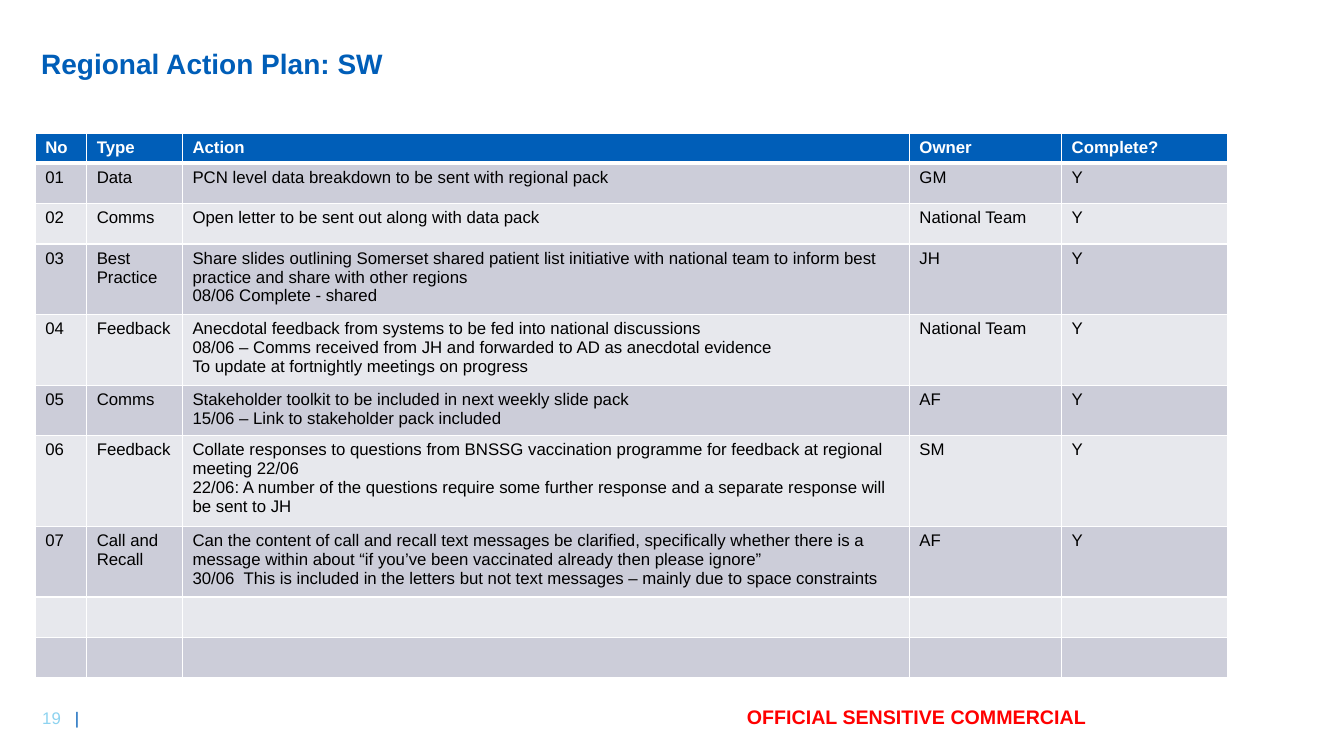
from dataclasses import dataclass

from lxml import etree
from pptx import Presentation
from pptx.dml.color import RGBColor
from pptx.enum.shapes import MSO_SHAPE
from pptx.enum.text import MSO_ANCHOR, PP_ALIGN
from pptx.oxml.ns import qn
from pptx.util import Inches, Pt

RECTANGLE = MSO_SHAPE.RECTANGLE
MIDDLE = MSO_ANCHOR.MIDDLE
LEFT = PP_ALIGN.LEFT


@dataclass(frozen=True)
class Theme:
    font: str = "Arial"
    blue: str = "005EB8"
    pale_blue: str = "8DD3F0"
    red: str = "FF0000"
    white: str = "FFFFFF"
    black: str = "000000"
    dark_band: str = "CCCDD9"
    light_band: str = "E7E8ED"
    title_size: int = 20
    marking_size: int = 14
    body_size: int = 12


theme = Theme()


def style_font(font, size, color, bold=False):
    font.name = theme.font
    font.size = Pt(size)
    font.bold = bold
    font.color.rgb = RGBColor.from_string(color)


def set_cell_borders(cell, bottom_width):
    """Draw white cell edges, 1 pt except for the bottom one."""
    properties = cell._tc.get_or_add_tcPr()
    edges = {"a:lnL": 1, "a:lnR": 1, "a:lnT": 1, "a:lnB": bottom_width}
    for position, (edge, width) in enumerate(edges.items()):
        line = etree.Element(qn(edge), w=str(Pt(width)))
        fill = etree.SubElement(line, qn("a:solidFill"))
        etree.SubElement(fill, qn("a:srgbClr"), val=theme.white)
        properties.insert(position, line)


prs = Presentation()
prs.slide_width = Inches(13.33)
prs.slide_height = Inches(7.5)
slide = prs.slides.add_slide(prs.slide_layouts[6])

# Footer
page_number = slide.shapes.add_textbox(Inches(0.32), Inches(6.97), Inches(0.71), Inches(0.3))
page_line = page_number.text_frame.paragraphs[0]
for text, color in [("19   ", theme.pale_blue), ("|", theme.blue)]:
    run = page_line.add_run()
    run.text = text
    style_font(run.font, theme.body_size, color)

marking = slide.shapes.add_shape(
    RECTANGLE, Inches(7.31), Inches(6.93), Inches(4.88), Inches(0.35))
marking.shadow.inherit = False
marking.fill.solid()
marking.fill.fore_color.rgb = RGBColor.from_string(theme.white)
marking.line.color.rgb = RGBColor.from_string(theme.white)
marking.line.width = Pt(1)
marking.text_frame.vertical_anchor = MIDDLE
marking_line = marking.text_frame.paragraphs[0]
marking_line.text = "OFFICIAL SENSITIVE COMMERCIAL"
marking_line.alignment = LEFT
style_font(marking_line.font, theme.marking_size, theme.red, bold=True)

# Title
title = slide.shapes.add_textbox(Inches(0.31), Inches(0.31), Inches(11.15), Inches(0.67))
title.text_frame.word_wrap = True
title.text_frame.vertical_anchor = MIDDLE
title_line = title.text_frame.paragraphs[0]
title_line.text = "Regional Action Plan: SW"
title_line.line_spacing = 0.9
style_font(title_line.font, theme.title_size, theme.blue, bold=True)

# Action table
blank_row = ("",) * 5
actions = [
    ("No", "Type", "Action", "Owner", "Complete?"),
    ("01", "Data", "PCN level data breakdown to be sent with regional pack", "GM", "Y"),
    ("02", "Comms", "Open letter to be sent out along with data pack", "National Team", "Y"),
    ("03", "Best Practice",
     "Share slides outlining Somerset shared patient list initiative with national team "
     "to inform best practice and share with other regions\n"
     "08/06 Complete - shared", "JH", "Y"),
    ("04", "Feedback",
     "Anecdotal feedback from systems to be fed into national discussions\n"
     "08/06 – Comms received from JH and forwarded to AD as anecdotal evidence\n"
     "To update at fortnightly meetings on progress", "National Team", "Y"),
    ("05", "Comms",
     "Stakeholder toolkit to be included in next weekly slide pack\n"
     "15/06 – Link to stakeholder pack included", "AF", "Y"),
    ("06", "Feedback",
     "Collate responses to questions from BNSSG vaccination programme for feedback "
     "at regional meeting 22/06\n"
     "22/06: A number of the questions require some further response and a separate "
     "response will be sent to JH", "SM", "Y"),
    ("07", "Call and Recall",
     "Can the content of call and recall text messages be clarified, specifically whether "
     "there is a message within about “if you’ve been vaccinated already then please ignore”\n"
     "30/06  This is included in the letters but not text messages – mainly due to space "
     "constraints", "AF", "Y"),
    blank_row,
    blank_row,
]
column_widths = [0.51, 0.95, 7.21, 1.51, 1.65]
row_heights = [0.29, 0.4, 0.4, 0.66, 0.66, 0.48, 0.85, 0.66, 0.4, 0.4]

action_table = slide.shapes.add_table(
    len(actions), len(column_widths), Inches(0.35), Inches(1.32),
    Inches(sum(column_widths)), Inches(sum(row_heights))).table
for column, width in zip(action_table.columns, column_widths):
    column.width = Inches(width)

for row_index, (row, height, values) in enumerate(zip(action_table.rows, row_heights, actions)):
    row.height = Inches(height)
    is_header = row_index == 0
    if is_header:
        row_fill, text_color = theme.blue, theme.white
    else:
        row_fill = theme.dark_band if row_index % 2 else theme.light_band
        text_color = theme.black
    for cell, value in zip(row.cells, values):
        cell.text = value
        cell.fill.solid()
        cell.fill.fore_color.rgb = RGBColor.from_string(row_fill)
        set_cell_borders(cell, bottom_width=3 if is_header else 1)
        for paragraph in cell.text_frame.paragraphs:
            style_font(paragraph.font, theme.body_size, text_color, bold=is_header)

prs.save("out.pptx")
